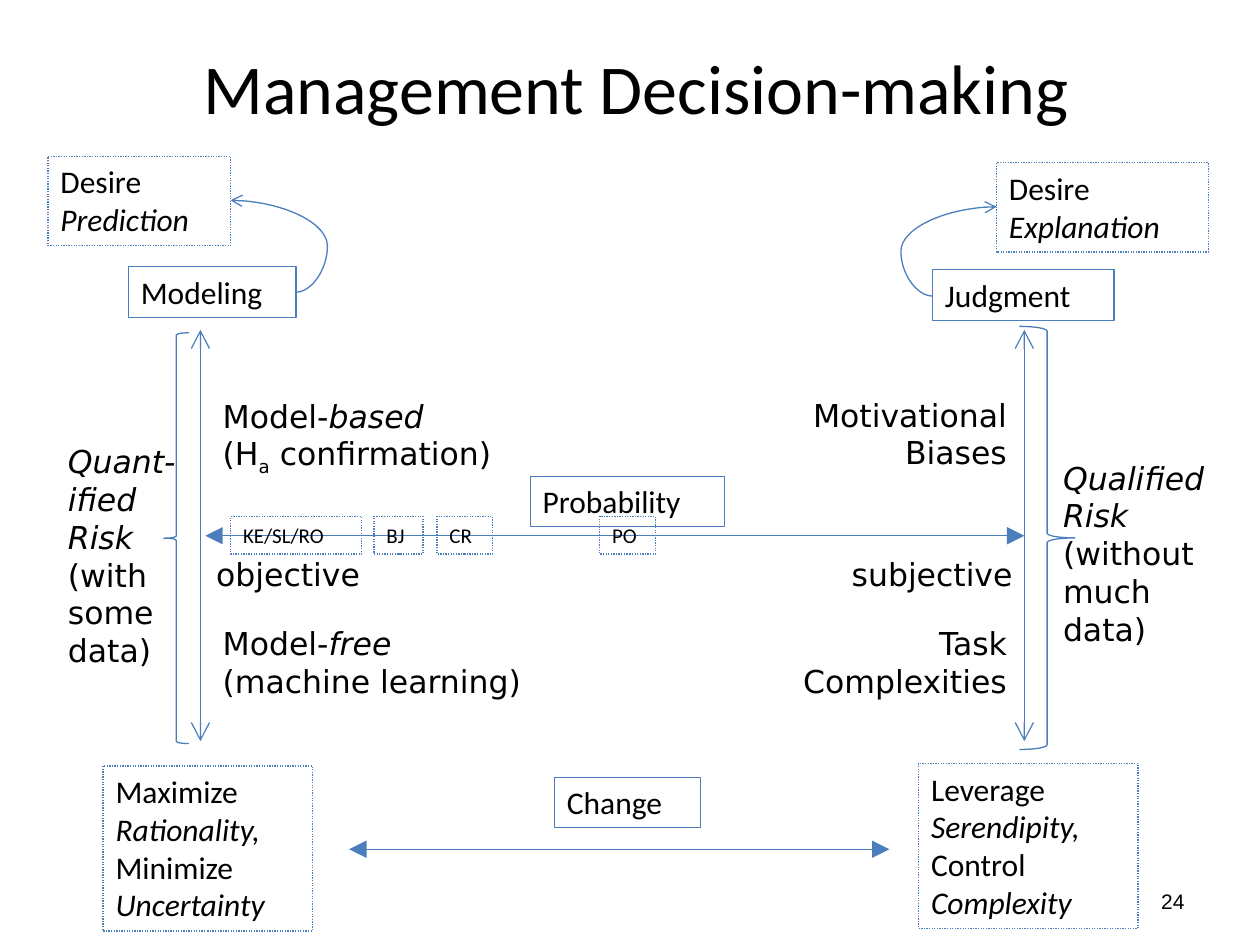
from dataclasses import dataclass
from typing import NamedTuple

from lxml.etree import SubElement
from pptx import Presentation
from pptx.dml.color import RGBColor
from pptx.enum.dml import MSO_LINE
from pptx.enum.shapes import MSO_CONNECTOR, MSO_SHAPE
from pptx.enum.text import MSO_ANCHOR, PP_ALIGN
from pptx.oxml.ns import qn
from pptx.util import Cm, Pt

BLUE = RGBColor(0x4B, 0x7E, 0xBC)
BLACK = RGBColor(0, 0, 0)
LEFT, MID, RIGHT = PP_ALIGN.LEFT, PP_ALIGN.CENTER, PP_ALIGN.RIGHT
SANS, BODY = "DejaVu Sans", "Calibri"


class Run(NamedTuple):
    text: str
    slant: bool = False
    sub: bool = False


def it(text: str) -> Run:
    return Run(text, slant=True)


@dataclass
class Label:
    """Text at a place in cm; each line is a run or a tuple of runs."""
    at: tuple
    lines: list
    font: str = SANS
    size: int = 18
    align: PP_ALIGN = LEFT
    anchor: MSO_ANCHOR = MSO_ANCHOR.TOP


@dataclass
class Box(Label):
    font: str = BODY
    dash: bool = False


@dataclass
class Arrow:
    start: tuple
    end: tuple
    head: str
    both: bool = True
    bend: int = 0  # curve handle, in 1/100000 of the width


def write(frame, item: Label) -> None:
    frame.word_wrap = True
    frame.vertical_anchor = item.anchor
    if item.align == RIGHT:
        frame.margin_left = 0
    else:
        frame.margin_right = 0
    for i, line in enumerate(item.lines):
        para = frame.add_paragraph() if i else frame.paragraphs[0]
        para.alignment = item.align
        for part in [line] if isinstance(line, Run) else line:
            run = para.add_run()
            run.text = part.text
            font = run.font
            font.name, font.size = item.font, Pt(item.size)
            font.italic = part.slant
            font.color.rgb = BLACK
            if part.sub:
                run._r.get_or_add_rPr().set("baseline", "-25000")


def outline(slide, kind: MSO_SHAPE, at: tuple):
    shape = slide.shapes.add_shape(kind, *map(Cm, at))
    shape.shadow.inherit = False
    shape.fill.background()
    shape.line.color.rgb = BLUE
    shape.line.width = Pt(0.75)
    return shape


def draw_label(slide, item: Label) -> None:
    write(slide.shapes.add_textbox(*map(Cm, item.at)).text_frame, item)


def draw_box(slide, item: Box) -> None:
    shape = outline(slide, MSO_SHAPE.RECTANGLE, item.at)
    if item.dash:
        shape.line.dash_style = MSO_LINE.ROUND_DOT
    write(shape.text_frame, item)


def draw_arrow(slide, item: Arrow) -> None:
    kind = MSO_CONNECTOR.CURVE if item.bend else MSO_CONNECTOR.STRAIGHT
    link = slide.shapes.add_connector(kind, *map(Cm, item.start + item.end))
    link.line.color.rgb = BLUE
    link.line.width = Pt(0.75)
    props = link._element.spPr
    size = "med" if item.bend else "lg"
    for tag in ("a:headEnd", "a:tailEnd") if item.both else ("a:tailEnd",):
        SubElement(link.line._get_or_add_ln(), qn(tag),
                   type=item.head, w=size, len=size)
    SubElement(props, qn("a:effectLst"))
    if item.bend:
        guides = props.find(qn("a:prstGeom")).find(qn("a:avLst"))
        SubElement(guides, qn("a:gd"), name="adj1", fmla=f"val {item.bend}")


# Heading and page number
HEADS = [
    Label((18.21, 17.65, 5.92, 1.02), [Run("24")], "Arial", 12, RIGHT,
          MSO_ANCHOR.MIDDLE),
    Label((1.27, 0.76, 22.86, 1.98), [Run("Management Decision-making")],
          BODY, 40, MID, MSO_ANCHOR.MIDDLE),
]

# Axes, then the curves to the desires
ARROWS = [
    Arrow((4.14, 10.8), (20.65, 10.8), "triangle"),
    Arrow((4.04, 6.65), (4.04, 14.94), "arrow"),
    Arrow((20.65, 6.65), (20.65, 14.94), "arrow"),
    Arrow((7.04, 17.12), (17.93, 17.12), "triangle"),
    Arrow((5.97, 5.89), (4.65, 4.04), "arrow", False, -47900),
    Arrow((18.8, 5.97), (20.09, 4.17), "arrow", False, -49500),
]

# Open text around the axes
LABELS = [
    Label((4.11, 11.07, 3.43, 1.02), [Run("objective")]),
    Label((16.92, 11.07, 3.78, 1.02), [Run("subjective")]),
    Label((16.05, 7.85, 4.5, 1.8), [Run("Motivational"), Run("Biases")],
          align=RIGHT),
    Label((15.9, 12.45, 4.65, 1.8), [Run("Task"), Run("Complexities")],
          align=RIGHT),
    Label((4.24, 7.87, 6.32, 1.8),
          [(Run("Model-"), it("based")),
           (Run("(H"), Run("a", sub=True), Run(" confirmation)"))]),
    Label((4.24, 12.45, 6.63, 1.8),
          [(Run("Model-"), it("free")), Run("(machine learning)")]),
    Label((1.12, 8.79, 2.74, 4.88),
          [it("Quant-"), it("ified"), it("Risk"),
           Run("(with"), Run("some"), Run("data)")]),
    Label((21.18, 9.12, 3.35, 4.11),
          [it("Qualified"), it("Risk"),
           Run("(without"), Run("much"), Run("data)")]),
]

# Solid boxes name the axes, dotted ones the aims
BOXES = [
    Box((2.59, 5.38, 3.38, 1.02), [Run("Modeling")]),
    Box((18.8, 5.44, 3.66, 1.02), [Run("Judgment")]),
    Box((10.69, 9.6, 3.91, 1.02), [Run("Probability")]),
    Box((11.18, 15.67, 2.95, 1.02), [Run("Change")]),
    Box((0.97, 3.15, 3.68, 1.8), [Run("Desire"), it("Prediction")],
        dash=True),
    Box((20.09, 3.28, 4.27, 1.8), [Run("Desire"), it("Explanation")],
        dash=True),
    Box((2.08, 15.44, 4.22, 3.33),
        [Run("Maximize"), it("Rationality,"),
         Run("Minimize"), it("Uncertainty")], dash=True),
    Box((18.52, 15.39, 4.42, 3.33),
        [Run("Leverage"), it("Serendipity,"),
         Run("Control"), it("Complexity")], dash=True),
]

# Tags on the probability axis: left, width, text
TAGS = [(4.65, 2.64, "KE/SL/RO"), (7.54, 0.99, "BJ"),
        (8.81, 1.12, "CR"), (12.09, 1.12, "PO")]

BRACES = [(MSO_SHAPE.LEFT_BRACE, (3.3, 6.71, 0.51, 8.28)),
          (MSO_SHAPE.RIGHT_BRACE, (20.55, 6.58, 1.12, 8.53))]


def main() -> None:
    deck = Presentation()
    deck.slide_width, deck.slide_height = Cm(25.4), Cm(19.05)
    slide = deck.slides.add_slide(deck.slide_layouts[6])
    for item in ARROWS:
        draw_arrow(slide, item)
    for item in HEADS + LABELS:
        draw_label(slide, item)
    for kind, at in BRACES:
        outline(slide, kind, at)
    for item in BOXES:
        draw_box(slide, item)
    for left, width, text in TAGS:
        draw_box(slide, Box((left, 10.41, width, 0.76), [Run(text)],
                            size=12, dash=True))
    deck.save("out.pptx")


if __name__ == "__main__":
    main()
